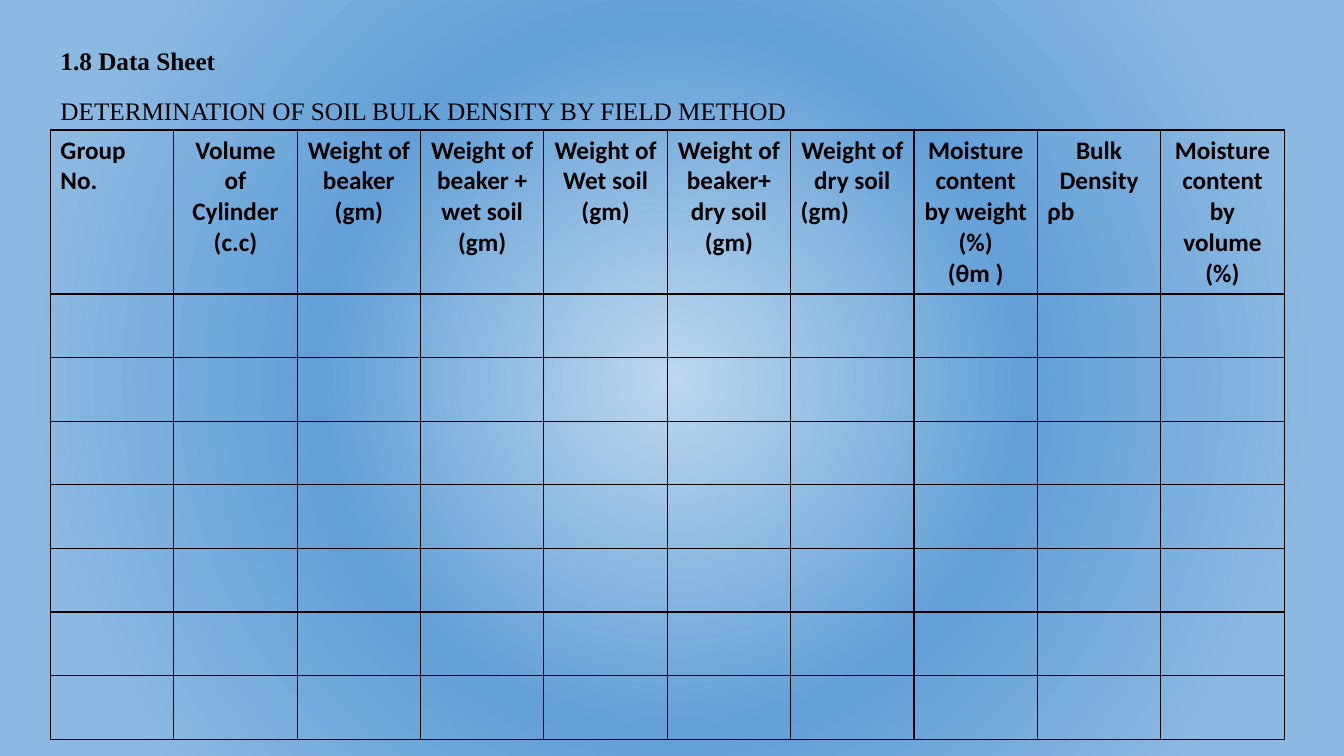
from dataclasses import dataclass

from lxml.etree import SubElement
from pptx import Presentation
from pptx.dml.color import RGBColor
from pptx.enum.text import MSO_ANCHOR, MSO_AUTO_SIZE, PP_ALIGN as Align
from pptx.oxml import parse_xml
from pptx.oxml.ns import nsdecls, qn
from pptx.util import Inches, Pt

HEADING = "1.8 Data Sheet"
SUBTITLE = "DETERMINATION OF SOIL BULK DENSITY BY FIELD METHOD"
COLUMNS = [
    ("Group No.", None, Align.LEFT),
    ("Volume of Cylinder", "(c.c)", Align.CENTER),
    ("Weight of beaker", "(gm)", Align.CENTER),
    ("Weight of beaker + wet soil", "(gm)", Align.CENTER),
    ("Weight of Wet soil", "(gm)", Align.CENTER),
    ("Weight of beaker+ dry soil", "(gm)", Align.CENTER),
    ("Weight of dry soil", "(gm)", Align.LEFT),
    ("Moisture content by weight (%)", "(θm )", Align.CENTER),
    ("Bulk Density", "ρb", Align.LEFT),
    ("Moisture content by volume", "(%)", Align.CENTER),
]
GROUPS = 7


@dataclass(frozen=True)
class Theme:
    ink: str = "000000"
    glow: tuple = ((0, "BDD7EE"), (46, "63A0D7"), (84, "8CB9E2"))
    title_font: str = "Times New Roman"
    table_font: str = "Calibri"
    size: int = 18
    border: int = 1


THEME = Theme()
LEFT, TITLE_TOP, TABLE_TOP = 0.5, 0.4, 1.29
WIDTH, TABLE_HEIGHT, HEADER_HEIGHT = 12.24, 6.02, 1.6


def write(p, text, font=THEME.table_font, bold=True, align=Align.LEFT, before=0):
    p.alignment = align
    p.space_before = Pt(before)
    r = p.add_run()
    r.text = text
    r.font.name = font
    r.font.size = Pt(THEME.size)
    r.font.bold = bold
    r.font.color.rgb = RGBColor.from_string(THEME.ink)


def set_background(slide):
    fill = slide.background.fill
    fill.solid()
    bg_pr = slide.background._cSld.bg.bgPr
    stops = "".join(
        f'<a:gs pos="{pos * 1000}"><a:srgbClr val="{color}"/></a:gs>'
        for pos, color in THEME.glow
    )
    grad = parse_xml(
        f'<a:gradFill {nsdecls("a")} rotWithShape="1"><a:gsLst>{stops}</a:gsLst>'
        '<a:path path="circle"><a:fillToRect l="50000" t="50000" r="50000" b="50000"/>'
        "</a:path></a:gradFill>"
    )
    bg_pr.replace(bg_pr.find(qn("a:solidFill")), grad)


def outline(cell):
    tc_pr = cell._tc.get_or_add_tcPr()
    for side in ("a:lnL", "a:lnR", "a:lnT", "a:lnB"):
        ln = SubElement(tc_pr, qn(side), w=str(Pt(THEME.border)))
        fill = SubElement(ln, qn("a:solidFill"))
        SubElement(fill, qn("a:srgbClr"), val=THEME.ink)
    cell.fill.background()


def add_heading(slide):
    s = slide.shapes.title
    s.left, s.top = Inches(LEFT), Inches(TITLE_TOP)
    s.width, s.height = Inches(WIDTH), Inches(TABLE_TOP - TITLE_TOP)
    tf = s.text_frame
    tf.auto_size = MSO_AUTO_SIZE.NONE
    tf.vertical_anchor = MSO_ANCHOR.TOP
    write(tf.paragraphs[0], HEADING, font=THEME.title_font)
    write(tf.add_paragraph(), SUBTITLE, font=THEME.title_font, bold=False, before=14)


def add_data_sheet(slide):
    table = slide.shapes.add_table(
        GROUPS + 1, len(COLUMNS), Inches(LEFT), Inches(TABLE_TOP),
        Inches(WIDTH), Inches(TABLE_HEIGHT),
    ).table
    table.first_row = table.horz_banding = False
    for col in table.columns:
        col.width = Inches(WIDTH / len(COLUMNS))
    for i, row in enumerate(table.rows):
        body_height = (TABLE_HEIGHT - HEADER_HEIGHT) / GROUPS
        row.height = Inches(body_height if i else HEADER_HEIGHT)
    for cell in table.iter_cells():
        outline(cell)
    for cell, (label, unit, align) in zip(table.rows[0].cells, COLUMNS):
        tf = cell.text_frame
        write(tf.paragraphs[0], label, align=Align.CENTER if unit else align)
        if unit:
            write(tf.add_paragraph(), unit, align=align)


def main():
    prs = Presentation()
    prs.slide_width, prs.slide_height = Inches(13.33), Inches(7.5)
    slide = prs.slides.add_slide(prs.slide_layouts[5])
    set_background(slide)
    add_heading(slide)
    add_data_sheet(slide)
    prs.save("out.pptx")


if __name__ == "__main__":
    main()
